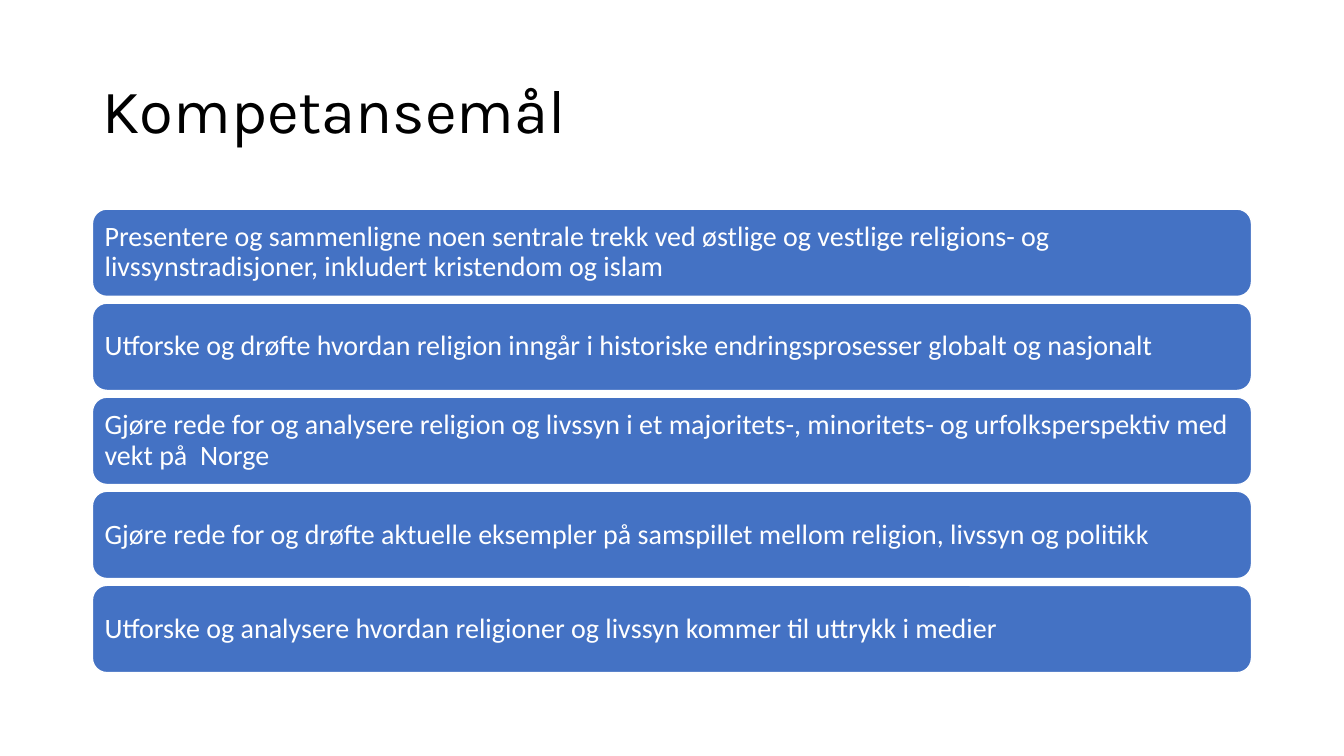
from pptx import Presentation
from pptx import util as u
from pptx.dml.color import RGBColor
from pptx.enum import shapes, text

# Content
TITLE = "Kompetansemål"
GOALS = [
    "Presentere og sammenligne noen sentrale trekk ved østlige og vestlige "
    "religions- og livssynstradisjoner, inkludert kristendom og islam",
    "Utforske og drøfte hvordan religion inngår i historiske "
    "endringsprosesser globalt og nasjonalt",
    "Gjøre rede for og analysere religion og livssyn i et majoritets-, "
    "minoritets- og urfolksperspektiv med vekt på  Norge",
    "Gjøre rede for og drøfte aktuelle eksempler på samspillet mellom "
    "religion, livssyn og politikk",
    "Utforske og analysere hvordan religioner og livssyn kommer til "
    "uttrykk i medier",
]

BLACK = RGBColor(0x00, 0x00, 0x00)
WHITE = RGBColor(0xFF, 0xFF, 0xFF)
BLUE = RGBColor(0x44, 0x72, 0xC4)

# Layout in centimetres
LEFT, WIDTH = 2.33, 29.21
TOP, HIGH, STEP = 5.27, 2.2, 2.37
PAD = 0.2


def write(shape, words, font, size, color):
    frame = shape.text_frame
    frame.word_wrap = True
    frame.auto_size = text.MSO_AUTO_SIZE.NONE
    frame.vertical_anchor = text.MSO_ANCHOR.MIDDLE
    para = frame.paragraphs[0]
    para.alignment = text.PP_ALIGN.LEFT
    para.line_spacing = 0.9
    run = para.add_run()
    run.text = words
    run.font.name = font
    run.font.size = u.Pt(size)
    run.font.color.rgb = color


def place(top, high):
    return u.Cm(LEFT), u.Cm(top), u.Cm(WIDTH), u.Cm(high)


deck = Presentation()
deck.slide_width, deck.slide_height = u.Cm(33.87), u.Cm(19.05)
slide = deck.slides.add_slide(deck.slide_layouts[5])

# Title
title = slide.shapes.title
title.left, title.top, title.width, title.height = place(1.01, 3.68)
write(title, TITLE, font="Karla", size=44, color=BLACK)

# One rounded bar for each goal
for row, goal in enumerate(GOALS):
    bar = slide.shapes.add_shape(
        shapes.MSO_SHAPE.ROUNDED_RECTANGLE, *place(TOP + row * STEP, HIGH))
    bar.shadow.inherit = False
    bar.fill.solid()
    bar.fill.fore_color.rgb = BLUE
    bar.line.color.rgb = WHITE
    bar.line.width = u.Pt(1)
    frame = bar.text_frame
    frame.margin_left = frame.margin_right = u.Cm(PAD)
    frame.margin_top = frame.margin_bottom = u.Cm(PAD)
    write(bar, goal, font="Calibri", size=20, color=WHITE)

deck.save("out.pptx")
